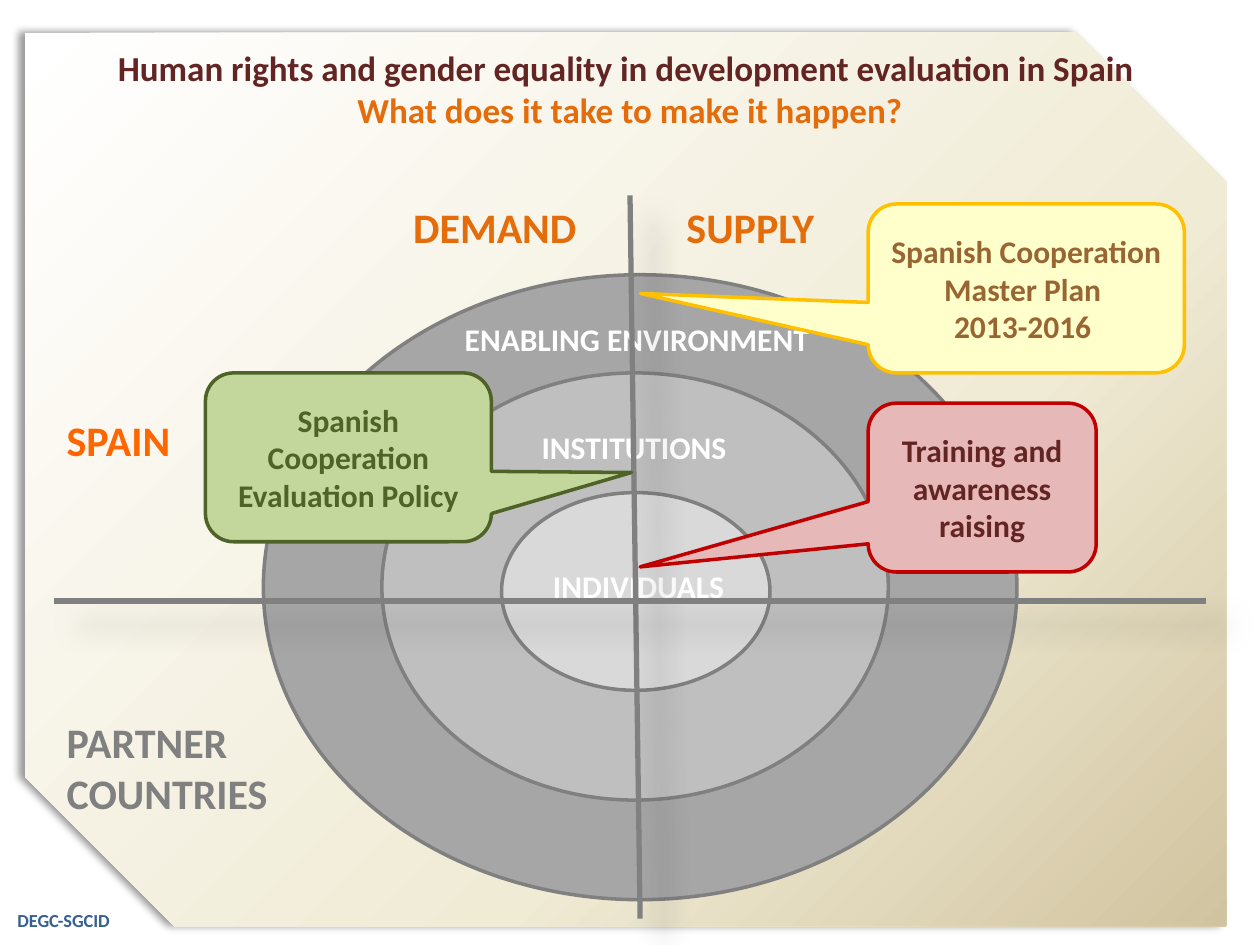
from dataclasses import dataclass

from pptx import Presentation
from pptx.dml.color import RGBColor
from pptx.enum.shapes import MSO_CONNECTOR, MSO_SHAPE
from pptx.enum.text import MSO_ANCHOR, PP_ALIGN
from pptx.oxml import parse_xml
from pptx.oxml.ns import nsdecls
from pptx.util import Pt

CARD = MSO_SHAPE.SNIP_2_DIAG_RECTANGLE
OVAL = MSO_SHAPE.OVAL
CALLOUT = MSO_SHAPE.ROUNDED_RECTANGULAR_CALLOUT
STRAIGHT = MSO_CONNECTOR.STRAIGHT
CENTER = PP_ALIGN.CENTER
LEFT = PP_ALIGN.LEFT
MIDDLE = MSO_ANCHOR.MIDDLE

FONT = "Calibri"
COLORS = {
    "white": "FFFFFF", "cream": "F0EBD5", "sand": "D1C39F", "black": "000000",
    "gray": "808080", "outer": "A6A6A6", "middle": "BFBFBF", "inner": "D9D9D9",
    "blue": "376092", "orange": "E46C0A", "bright orange": "FF6600",
    "yellow": "FFFFCC", "gold": "FFC000", "brown": "996633",
    "pink": "E6B9B8", "red": "C00000", "maroon": "632523",
    "green": "C3D69B", "dark green": "4F6228",
}


@dataclass
class Area:
    left: float
    top: float
    width: float
    height: float

    def lengths(self):
        return Pt(self.left), Pt(self.top), Pt(self.width), Pt(self.height)


@dataclass
class Label:
    area: Area
    lines: list[str]
    size: float
    color: str


@dataclass
class Ring:
    area: Area
    fill: str


@dataclass
class Callout:
    area: Area
    lines: list[str]
    pointer: tuple[float, float]
    fill: str
    line: str
    color: str


@dataclass
class Axis:
    start: tuple[float, float]
    end: tuple[float, float]


RINGS = [
    Ring(Area(150.5, 157, 430.6, 357.1), "outer"),
    Ring(Area(218.2, 213.1, 289.4, 244.1), "middle"),
    Ring(Area(286.6, 281.5, 153.4, 113), "inner"),
]
RING_LABELS = [
    Label(Area(258.5, 179.3, 213.1, 28.8), ["ENABLING ENVIRONMENT"], 18, "white"),
    Label(Area(302.4, 241.2, 121, 28.8), ["INSTITUTIONS"], 18, "white"),
    Label(Area(308.9, 320.4, 113, 28.8), ["INDIVIDUALS"], 18, "white"),
]
AXES = [Axis((360, 111.6), (365.8, 524.9)), Axis((31, 343.4), (689, 343.4))]
AXIS_LABELS = [
    Label(Area(229, 111.6, 108.7, 36.7), ["DEMAND"], 24, "orange"),
    Label(Area(385.2, 111.6, 88.6, 36.7), ["SUPPLY"], 24, "orange"),
    Label(Area(31, 406.1, 130.3, 65.5), ["PARTNER", "COUNTRIES"], 24, "gray"),
    Label(Area(31, 233.3, 74.2, 36), ["SPAIN"], 24, "bright orange"),
]
CALLOUTS = [
    Callout(Area(496.1, 116.6, 180.7, 96.5),
            ["Spanish Cooperation Master Plan ", "2013-2016 "],
            (-1.22, 0.03), "yellow", "gold", "brown"),
    Callout(Area(496.1, 230.4, 130.3, 96.5), ["Training and awareness raising"],
            (-1.5, 0.47), "pink", "red", "maroon"),
    Callout(Area(117.4, 213.1, 163.4, 96.5),
            ["Spanish Cooperation Evaluation Policy"],
            (0.99, 0.09), "green", "dark green", "dark green"),
]
FOOTER = Label(Area(2.9, 516.2, 79.2, 20.2), ["DEGC-SGCID"], 10.5, "blue")


def rgb(name: str) -> RGBColor:
    return RGBColor.from_string(COLORS[name])


def style_font(font, size: float, color: str) -> None:
    font.name, font.size, font.bold = FONT, Pt(size), True
    font.color.rgb = rgb(color)


def write_lines(frame, lines: list[str], size: float, color: str, align) -> None:
    for index, line in enumerate(lines):
        para = frame.paragraphs[0] if index == 0 else frame.add_paragraph()
        para.text = line
        para.alignment = align
        style_font(para.font, size, color)


def add_shadow(item, opacity: int, blur: float, distance: float, angle: int) -> None:
    """Append an outer shadow; call after the fill and line are set."""
    item._element.spPr.append(parse_xml(
        f'<a:effectLst {nsdecls("a")}><a:outerShdw blurRad="{Pt(blur)}" '
        f'dist="{Pt(distance)}" dir="{angle * 60000}" algn="ctr" rotWithShape="0">'
        f'<a:srgbClr val="{COLORS["black"]}"><a:alpha val="{opacity * 1000}"/>'
        "</a:srgbClr></a:outerShdw></a:effectLst>"))


def add_card(page) -> None:
    card = page.shapes.add_shape(CARD, *Area(14.4, 18.7, 686.2, 510.5).lengths())
    card.adjustments[0], card.adjustments[1] = 0, 0.167
    card.line.fill.background()
    stops = "".join(
        f'<a:gs pos="{percent * 1000}"><a:srgbClr val="{COLORS[name]}"/></a:gs>'
        for percent, name in [(0, "white"), (65, "cream"), (100, "sand")])
    card._element.spPr.insert(2, parse_xml(
        f'<a:gradFill {nsdecls("a")} rotWithShape="1"><a:gsLst>{stops}</a:gsLst>'
        '<a:lin ang="2700000" scaled="0"/></a:gradFill>'))
    add_shadow(card, 40, 4, 3, 180)


def add_outlined(page, kind, area: Area, fill: str, line: str):
    shape = page.shapes.add_shape(kind, *area.lengths())
    shape.shadow.inherit = False
    shape.fill.solid()
    shape.fill.fore_color.rgb = rgb(fill)
    shape.line.color.rgb = rgb(line)
    shape.line.width = Pt(2)
    return shape


def add_label(page, label: Label) -> None:
    frame = page.shapes.add_textbox(*label.area.lengths()).text_frame
    frame.word_wrap = False
    write_lines(frame, label.lines, label.size, label.color, LEFT)


def add_axis(page, axis: Axis) -> None:
    points = [Pt(value) for value in axis.start + axis.end]
    connector = page.shapes.add_connector(STRAIGHT, *points)
    connector.line.color.rgb = rgb("gray")
    connector.line.width = Pt(3)
    add_shadow(connector, 26, 15, 18, 45)


def add_callout(page, callout: Callout) -> None:
    shape = add_outlined(page, CALLOUT, callout.area, callout.fill, callout.line)
    for index, value in enumerate((*callout.pointer, 0.167)):
        shape.adjustments[index] = value
    frame = shape.text_frame
    frame.word_wrap = True
    frame.vertical_anchor = MIDDLE
    write_lines(frame, callout.lines, 18, callout.color, CENTER)


def add_title(page) -> None:
    frame = page.shapes.add_textbox(*Area(36, 23, 648, 67).lengths()).text_frame
    frame.word_wrap = True
    para = frame.paragraphs[0]
    para.alignment = CENTER
    heading = para.add_run()
    heading.text = "Human rights and gender equality in development evaluation in Spain "
    style_font(heading.font, 20, "maroon")
    para.add_line_break()
    question = para.add_run()
    question.text = "What does it take to make it happen?"
    style_font(question.font, 20, "orange")


def main() -> None:
    deck = Presentation()
    deck.slide_width, deck.slide_height = Pt(720), Pt(540)
    page = deck.slides.add_slide(deck.slide_layouts[6])
    add_label(page, FOOTER)
    add_card(page)
    for ring in RINGS:
        add_outlined(page, OVAL, ring.area, ring.fill, "gray")
    for label in RING_LABELS:
        add_label(page, label)
    for axis in AXES:
        add_axis(page, axis)
    for label in AXIS_LABELS:
        add_label(page, label)
    for callout in CALLOUTS:
        add_callout(page, callout)
    add_title(page)
    deck.save("out.pptx")


if __name__ == "__main__":
    main()
